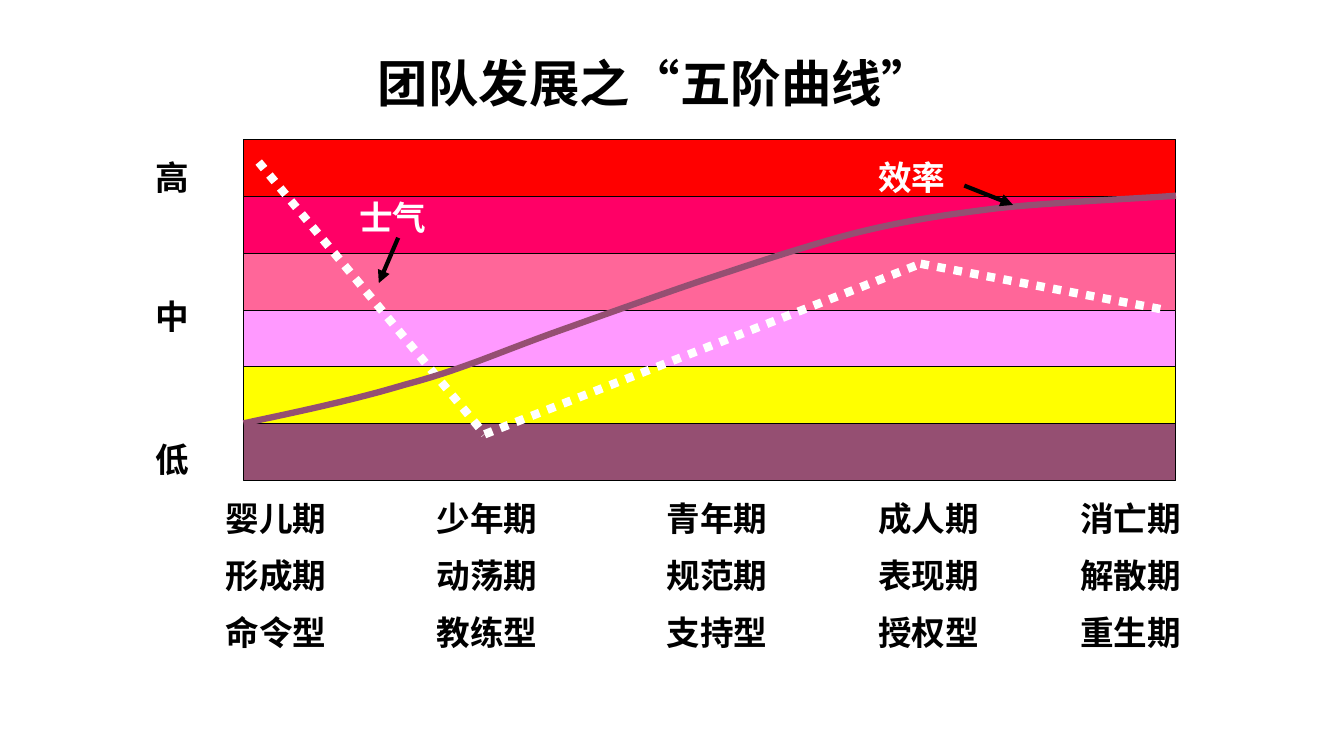
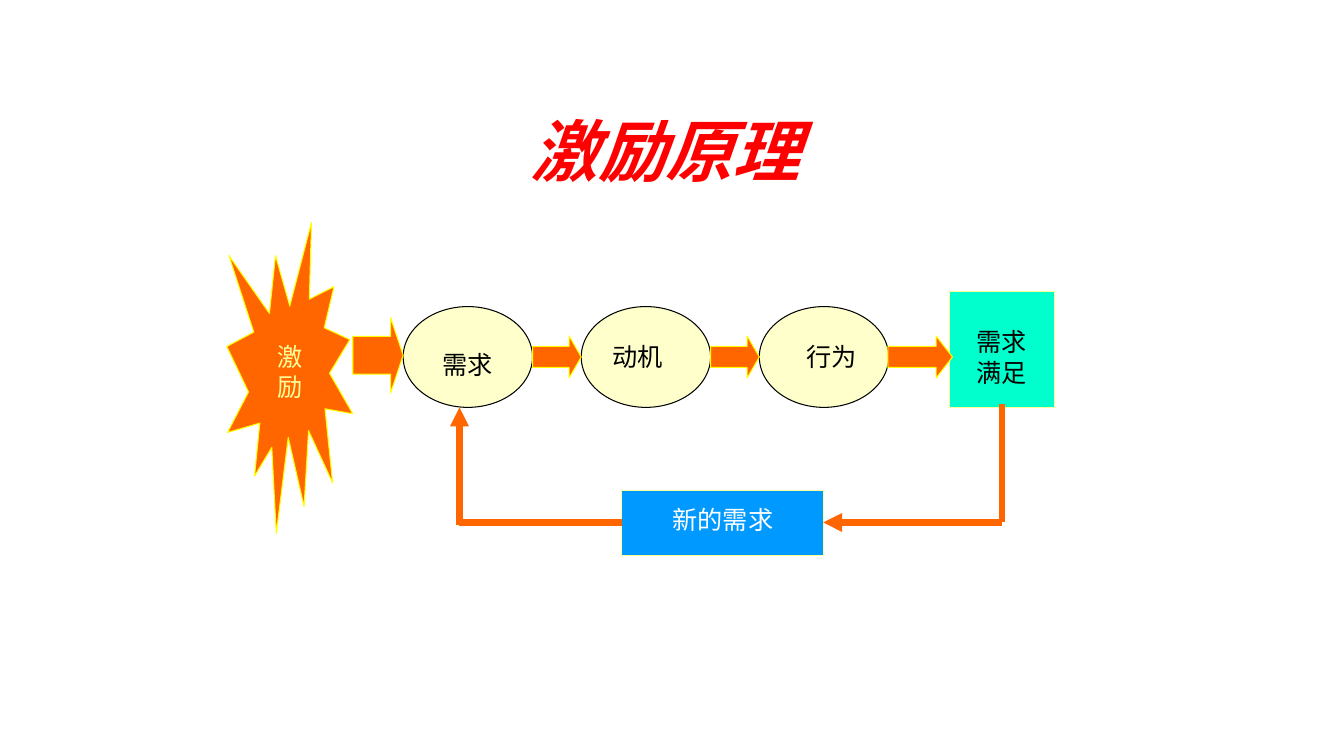
from dataclasses import dataclass
from itertools import pairwise

from lxml.etree import SubElement
from pptx import Presentation
from pptx.dml.color import RGBColor
from pptx.enum.dml import MSO_LINE
from pptx.enum.shapes import MSO_CONNECTOR, MSO_SHAPE as Shape
from pptx.enum.text import MSO_ANCHOR as Anchor, MSO_AUTO_SIZE as AutoSize, PP_ALIGN as Align
from pptx.oxml.ns import qn
from pptx.util import Inches, Pt


@dataclass(frozen=True)
class Theme:
    """Colours, fonts and type sizes of the deck."""
    black: str = "000000"
    white: str = "FFFFFF"
    red: str = "FF0000"
    plum: str = "954F72"
    orange: str = "FF6600"
    yellow: str = "FFFF00"
    cream: str = "FFFFCC"
    pale: str = "FFFF99"
    mint: str = "00FFCC"
    blue: str = "0099FF"
    bands: tuple = ("FF0000", "FF0066", "FF6699", "FF99FF", "FFFF00", "954F72")
    heading: str = "Noto Sans CJK SC"
    display: str = "Arial"
    body: str = "Calibri"
    title_size: int = 36
    display_size: int = 48
    label_size: int = 24
    body_size: int = 18
    hairline: float = 0.75


THEME = Theme()
CELL = Inches(1) / 12


def cells(*counts):
    """Turn grid cells, 160 across and 90 down, into lengths."""
    return [round(count * CELL) for count in counts]


def bezier(start, first, second, end, steps=12):
    """List the points of a cubic curve after its start."""
    shares = [step / steps for step in range(1, steps + 1)]
    return [
        tuple((1 - t) ** 3 * a + 3 * (1 - t) ** 2 * t * b + 3 * (1 - t) * t ** 2 * c + t ** 3 * d
              for a, b, c, d in zip(start, first, second, end))
        for t in shares
    ]


class Board:
    """Draws styled elements on the current slide."""

    def __init__(self):
        """Open an empty widescreen deck."""
        self.deck = Presentation()
        self.deck.slide_width, self.deck.slide_height = cells(160, 90)
        self.page = None

    def start(self, title, box, size, font, color, italic=False, indent=0):
        """Add a title-only slide and format its title."""
        self.page = self.deck.slides.add_slide(self.deck.slide_layouts[5])
        holder = self.page.shapes.title
        holder.left, holder.top, holder.width, holder.height = cells(*box)
        holder.text_frame.auto_size = AutoSize.NONE
        holder.text_frame.margin_left = cells(1.2 + indent)[0]
        self.set_text(holder, title, size, font, color, bold=True, italic=italic,
                      align=Align.LEFT, anchor=Anchor.MIDDLE)

    def set_text(self, box, text, size, font, color, bold=False, italic=False,
                 align=Align.CENTER, anchor=Anchor.TOP, gap=0):
        """Fill a box with evenly styled paragraphs."""
        frame = box.text_frame
        frame.word_wrap = True
        frame.vertical_anchor = anchor
        frame.text = text
        for para in frame.paragraphs:
            para.alignment = align
            para.space_before = Pt(gap)
            for span in para.runs:
                span.font.name, span.font.size = font, Pt(size)
                span.font.bold, span.font.italic = bold, italic
                span.font.color.rgb = RGBColor.from_string(color)

    def label(self, text, box, color=THEME.black, align=Align.LEFT):
        """Place a bold label."""
        self.set_text(self.page.shapes.add_textbox(*cells(*box)), text, THEME.label_size,
                      THEME.heading, color, bold=True, align=align, gap=THEME.label_size / 2)

    def caption(self, text, box, color=THEME.black):
        """Place a centred caption."""
        self.set_text(self.page.shapes.add_textbox(*cells(*box)), text, THEME.body_size,
                      THEME.body, color, gap=THEME.body_size / 2)

    def shape(self, kind, box, fill, line, adjust=()):
        """Draw a filled and outlined preset shape."""
        shape = self.page.shapes.add_shape(kind, *cells(*box))
        shape.shadow.inherit = False
        shape.fill.solid()
        shape.fill.fore_color.rgb = RGBColor.from_string(fill)
        self.stroke(shape, line, THEME.hairline)
        for index, value in enumerate(adjust):
            shape.adjustments[index] = value
        return shape

    def panel(self, text, box, fill, color, inset):
        """Draw a rectangle with text hung below its top edge."""
        panel = self.shape(Shape.RECTANGLE, box, fill, THEME.pale)
        panel.text_frame.margin_top = cells(inset)[0]
        self.set_text(panel, text, THEME.body_size, THEME.body, color)

    def stroke(self, item, color, width):
        """Set the colour and width of a line."""
        item.line.color.rgb = RGBColor.from_string(color)
        item.line.width = Pt(width)

    def line(self, start, end, color, width, arrow=False, dash=None):
        """Draw a straight line, with an arrowhead if asked."""
        line = self.page.shapes.add_connector(MSO_CONNECTOR.STRAIGHT, *cells(*start, *end))
        self.stroke(line, color, width)
        if dash:
            line.line.dash_style = dash
        properties = line.element.spPr
        if arrow:
            SubElement(properties.find(qn("a:ln")), qn("a:tailEnd"), type="triangle")
        SubElement(properties, qn("a:effectLst"))

    def curve(self, knots, color, width):
        """Draw an open smooth curve through groups of three control points."""
        start, *rest = knots
        points = []
        for index in range(0, len(rest), 3):
            points += bezier(knots[index], *rest[index:index + 3])
        builder = self.page.shapes.build_freeform(*cells(*start))
        builder.add_line_segments([cells(*point) for point in points], close=False)
        curve = builder.convert_to_shape()
        curve.shadow.inherit = False
        curve.fill.background()
        self.stroke(curve, color, width)


def draw_stages(board):
    """Draw morale and efficiency over five team stages."""
    board.start("团队发展之“五阶曲线”", (27.8, 2.3, 108, 15), THEME.title_size,
                THEME.heading, THEME.black, indent=16)
    for row, fill in enumerate(THEME.bands):
        board.shape(Shape.RECTANGLE, (29, 16.6 + row * 6.77, 111, 6.77), fill, THEME.black)

    morale = [(30.8, 19.3), (57.7, 51.7), (109.6, 31.4), (138.2, 36.8)]
    for start, end in pairwise(morale):
        board.line(start, end, THEME.white, 6, dash=MSO_LINE.ROUND_DOT)
    efficiency = [
        (29, 50.4), (35.6, 49), (42.2, 47.6), (48.2, 45.8),
        (54.4, 44.2), (59.6, 41.9), (65.4, 39.8),
        (71, 37.8), (76.3, 35.9), (82.4, 33.8),
        (88.4, 31.8), (95.5, 29.4), (101.6, 27.8),
        (107.6, 26.3), (112.3, 25.6), (118.7, 24.8),
        (125, 24.1), (136.4, 23.6), (140, 23.3),
    ]
    board.curve(efficiency, THEME.plum, 4.5)

    stages = {
        25.7: "婴儿期\n形成期\n命令型",
        50.8: "少年期\n动荡期\n教练型",
        78.2: "青年期\n规范期\n支持型",
        103.4: "成人期\n表现期\n授权型",
        127.4: "消亡期\n解散期\n重生期",
    }
    for left, text in stages.items():
        board.label(text, (left, 58.7, 19.4, 20.6))
    for level, top in (("高", 18.1), ("中", 34.6), ("低", 51.7)):
        board.label(level, (13.1, top, 14.9, 6.1), align=Align.CENTER)

    board.label("效率", (103.4, 18.1, 19.4, 6.1), THEME.white)
    board.line((114.8, 22.1), (120.6, 24.4), THEME.black, 3, arrow=True)
    board.label("士气", (41.6, 22.8, 19.4, 6.1), THEME.white)
    board.line((47.4, 28.3), (45.1, 33.7), THEME.black, 3, arrow=True)


def draw_motivation(board):
    """Draw the loop from need to satisfaction and new need."""
    board.start("激励原理", (62, 12.4, 36, 10.9), THEME.display_size,
                THEME.display, THEME.red, italic=True)
    board.shape(Shape.EXPLOSION1, (27, 26.5, 15, 37), THEME.orange, THEME.yellow)
    board.caption("激励", (30.5, 40, 8, 8.5), THEME.pale)

    steps = (("需求", 49, 41), ("动机", 69.2, 40), ("行为", 92.3, 40))
    for column, (text, left, top) in enumerate(steps):
        board.shape(Shape.OVAL, (48 + column * 21.2, 36.5, 15.4, 12), THEME.cream, THEME.black)
        board.caption(text, (left, top, 13.4, 4.8))
    board.panel("需求\n满足", (113, 34.7, 12.5, 13.8), THEME.mint, THEME.black, 4.2)
    board.panel("新的需求", (74, 58.4, 24.1, 7.7), THEME.blue, THEME.white, 1.6)

    arrows = (((42, 37.8, 6, 9), 0.25), ((63.4, 40, 5.8, 5), 0.29),
              ((84.6, 40, 5.8, 5), 0.29), ((105.7, 40, 7.7, 5), 0.39))
    for box, head in arrows:
        board.shape(Shape.RIGHT_ARROW, box, THEME.orange, THEME.yellow, (0.5, head))

    loop = (((119.3, 48.1), (119.3, 62.2), False), ((119.3, 62.2), (98, 62.2), True),
            ((54.7, 62.5), (54.7, 48.5), True), ((74, 62.2), (54.7, 62.2), False))
    for start, end, arrow in loop:
        board.line(start, end, THEME.orange, 4.5, arrow)


def main():
    """Build and save the deck."""
    board = Board()
    draw_stages(board)
    draw_motivation(board)
    board.deck.save("out.pptx")


if __name__ == "__main__":
    main()
